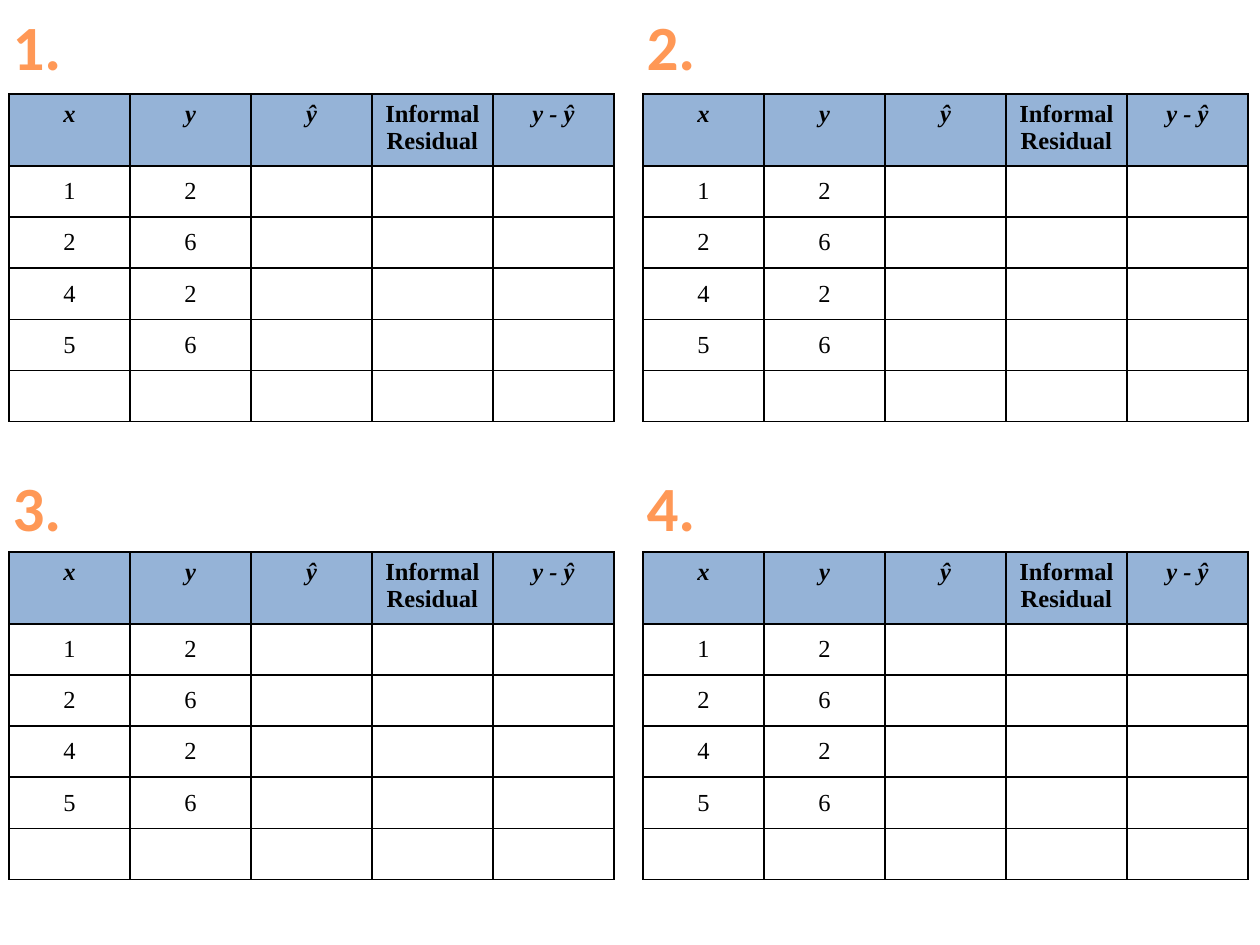
from itertools import product

from lxml.etree import SubElement
from pptx import Presentation
from pptx.dml.color import RGBColor
from pptx.enum.text import MSO_ANCHOR, MSO_AUTO_SIZE, PP_ALIGN
from pptx.oxml.ns import qn
from pptx.util import Pt

PX = 914400 // 126
BLACK = RGBColor(0x00, 0x00, 0x00)
BLUE = RGBColor(0x95, 0xB3, 0xD7)
ORANGE = RGBColor(0xFF, 0x98, 0x56)

# header text, italic
HEADER = [("x", True), ("y", True), ("ŷ", True),
          ("Informal Residual", False), ("y - ŷ", True)]
POINTS = [(1, 2), (2, 6), (4, 2), (5, 6)]
ROWS = len(POINTS) + 2
COL_W, HEADER_H, ROW_H = 121, 72, 51
# left of label, left of table / top of label, top of table
COLUMNS = [(0, 9), (634, 643)]
BANDS = [(1, 94), (462, 552)]


class Worksheet:
    table_font, label_font = "Times New Roman", "Calibri"
    table_size, label_size = Pt(14), Pt(36)

    def __init__(self, slide):
        self.s = slide

    def run(self, p, text, font, size, color, bold=False, italic=False):
        p.alignment = PP_ALIGN.CENTER
        r = p.add_run()
        r.text = text
        r.font.name, r.font.size = font, size
        r.font.bold, r.font.italic = bold, italic
        r.font.color.rgb = color

    def label(self, x, y, text):
        tf = self.s.shapes.add_textbox(x * PX, y * PX, 74 * PX, 89 * PX).text_frame
        tf.word_wrap = False
        tf.auto_size = MSO_AUTO_SIZE.SHAPE_TO_FIT_TEXT
        self.run(tf.paragraphs[0], text, self.label_font, self.label_size,
                 ORANGE, bold=True)

    def borders(self, cell):
        tc_pr = cell._tc.get_or_add_tcPr()
        for side in ("a:lnL", "a:lnR", "a:lnT", "a:lnB"):
            ln = SubElement(tc_pr, qn(side), w=str(Pt(1)))
            fill = SubElement(ln, qn("a:solidFill"))
            SubElement(fill, qn("a:srgbClr"), val=str(BLACK))

    def cell_text(self, cell, text, **style):
        self.run(cell.text_frame.paragraphs[0], text, self.table_font,
                 self.table_size, BLACK, **style)

    def residual_table(self, x, y):
        height = HEADER_H + (ROWS - 1) * ROW_H
        table = self.s.shapes.add_table(ROWS, len(HEADER), x * PX, y * PX,
                                        len(HEADER) * COL_W * PX, height * PX).table
        table.first_row = table.horz_banding = False
        for col in table.columns:
            col.width = COL_W * PX
        for i, row in enumerate(table.rows):
            row.height = (ROW_H if i else HEADER_H) * PX
        for cell in table.iter_cells():
            self.borders(cell)
            cell.fill.background()
        for j, (text, italic) in enumerate(HEADER):
            cell = table.cell(0, j)
            cell.fill.solid()
            cell.fill.fore_color.rgb = BLUE
            self.cell_text(cell, text, bold=True, italic=italic)
        for i, point in enumerate(POINTS, 1):
            for j, value in enumerate(point):
                cell = table.cell(i, j)
                cell.vertical_anchor = MSO_ANCHOR.MIDDLE
                self.cell_text(cell, str(value))


def main():
    prs = Presentation()
    prs.slide_width, prs.slide_height = 1260 * PX, 945 * PX
    sheet = Worksheet(prs.slides.add_slide(prs.slide_layouts[6]))
    places = list(product(BANDS, COLUMNS))
    for (_, top), (_, left) in places:
        sheet.residual_table(left, top)
    for n, ((top, _), (left, _)) in enumerate(places, 1):
        sheet.label(left, top, f"{n}.")
    prs.save("out.pptx")


if __name__ == "__main__":
    main()
